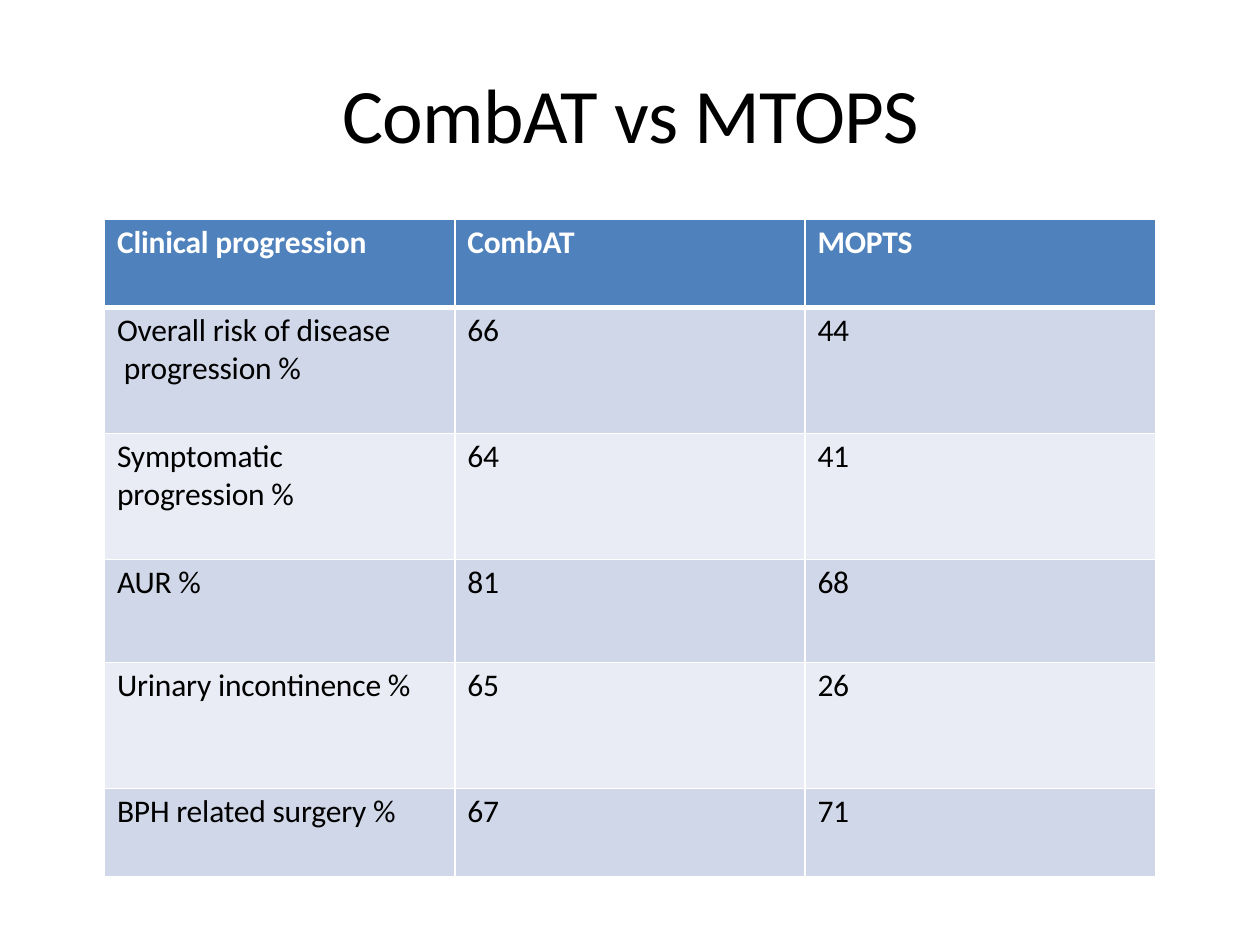
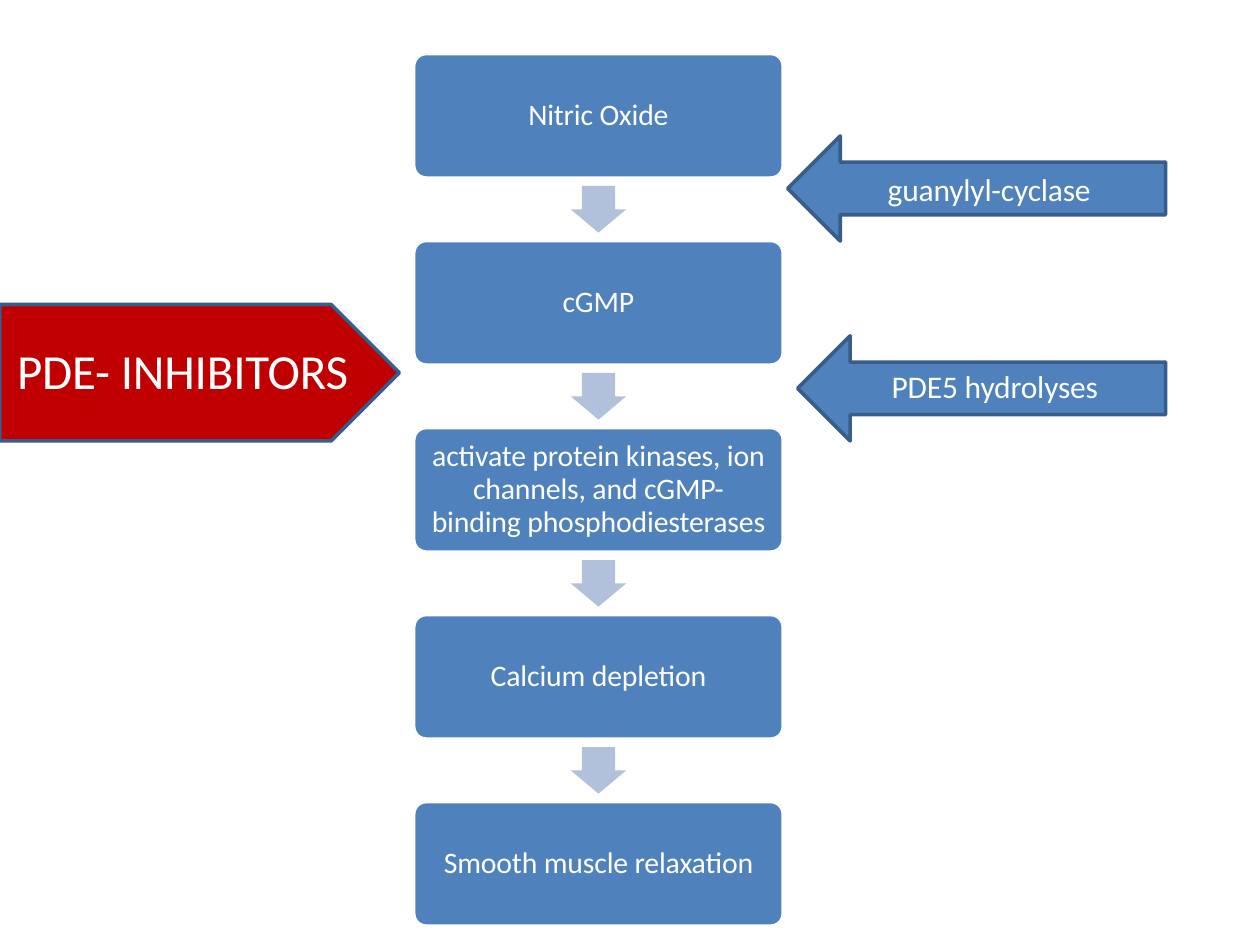
from dataclasses import dataclass

from lxml import etree
from pptx import Presentation
from pptx import util as u
from pptx.dml import color
from pptx.enum import shapes, text
from pptx.oxml import ns


@dataclass(frozen=True)
class Theme:
    font: str = "Calibri"
    black: str = "000000"
    white: str = "FFFFFF"
    blue: str = "4F81BC"
    outline: str = "385D89"
    pale_arrow: str = "B1C1DB"
    red: str = "C00000"
    bands: tuple[str, str] = ("D0D7E8", "E9ECF4")
    title_size: int = 44
    callout_size: int = 28
    body_size: int = 18
    step_size: int = 17
    line_width: float = 2.04
    grid_width: int = 1
    header_rule_width: int = 3


THEME = Theme()


@dataclass(frozen=True)
class Box:
    """Left, top, width and height in centimetres."""
    left: float
    top: float
    width: float
    height: float

    def lengths(self) -> tuple[u.Cm, ...]:
        return tuple(u.Cm(v) for v in (self.left, self.top, self.width, self.height))


@dataclass(frozen=True)
class Label:
    """Wording with its look; a newline is a line break."""
    wording: str
    size: int
    colour: str = THEME.white
    bold: bool = False
    tracking: float = -0.1


@dataclass(frozen=True)
class Figure:
    """A filled preset shape, with an optional outline and label."""
    kind: shapes.MSO_SHAPE
    box: Box
    fill: str
    outline: str | None = None
    label: Label | None = None
    adjustments: tuple[float, ...] = ()


@dataclass(frozen=True)
class Row:
    height: float
    cells: tuple[str, str, str]


# Content
OUTCOMES = (
    Row(1.78, ("Clinical progression", "CombAT", "MOPTS")),
    Row(2.54, ("Overall risk of disease\n progression %", "66", "44")),
    Row(2.54, ("Symptomatic\nprogression %", "64", "41")),
    Row(2.08, ("AUR %", "81", "68")),
    Row(2.54, ("Urinary incontinence %", "65", "26")),
    Row(1.78, ("BPH related surgery %", "67", "71")),
)
PATHWAY = (
    "Nitric Oxide",
    "cGMP",
    "activate protein kinases, ion\nchannels, and cGMP-\nbinding phosphodiesterases",
    "Calcium depletion",
    "Smooth muscle relaxation",
)

# Layout, in centimetres
TITLE_BOX = Box(6.76, 1.3, 11.91, 1.93)
TABLE_BOX = Box(2.11, 4.42, 21.18, 13.26)
FIRST_STEP = Box(8.34, 1.08, 7.45, 2.51)
STEP_PITCH = 3.77
STEP_ARROW_SIZE = (1.12, 0.94)
ENZYME_RIGHT = 23.5
ENZYME_HEIGHT = 2.12


def rgb(value: str) -> color.RGBColor:
    return color.RGBColor.from_string(value)


def write(frame, label: Label) -> None:
    """Write a label into the first paragraph of a text frame."""
    paragraph = frame.paragraphs[0]
    for index, line in enumerate(label.wording.split("\n")):
        if index:
            paragraph.add_line_break()
        run = paragraph.add_run()
        run.text = line
        run.font.name = THEME.font
        run.font.size = u.Pt(label.size)
        run.font.bold = label.bold
        run.font.color.rgb = rgb(label.colour)
        run.font._element.set("spc", str(round(label.tracking * 100)))


def centre(frame) -> None:
    """Centre a frame's text both ways, without insets or wrapping."""
    frame.margin_left = frame.margin_right = 0
    frame.margin_top = frame.margin_bottom = 0
    frame.word_wrap = False
    frame.auto_size = text.MSO_AUTO_SIZE.NONE
    frame.vertical_anchor = text.MSO_ANCHOR.MIDDLE
    frame.paragraphs[0].alignment = text.PP_ALIGN.CENTER


def set_title(slide, box: Box, label: Label):
    title = slide.shapes.title
    title.left, title.top, title.width, title.height = box.lengths()
    centre(title.text_frame)
    write(title.text_frame, label)
    return title


def draw(slide, figure: Figure) -> None:
    shape = slide.shapes.add_shape(figure.kind, *figure.box.lengths())
    shape.shadow.inherit = False
    for index, value in enumerate(figure.adjustments):
        shape.adjustments[index] = value
    shape.fill.solid()
    shape.fill.fore_color.rgb = rgb(figure.fill)
    if figure.outline:
        shape.line.color.rgb = rgb(figure.outline)
        shape.line.width = u.Pt(THEME.line_width)
    else:
        shape.line.fill.background()
    if figure.label:
        centre(shape.text_frame)
        shape.text_frame.paragraphs[0].line_spacing = 0.92
        write(shape.text_frame, figure.label)


def set_border(cell, side: str, width: float) -> None:
    properties = cell._tc.get_or_add_tcPr()
    line = etree.SubElement(properties, ns.qn(f"a:ln{side}"), w=str(u.Pt(width)))
    fill = etree.SubElement(line, ns.qn("a:solidFill"))
    etree.SubElement(fill, ns.qn("a:srgbClr"), val=THEME.white)


def fill_cell(cell, wording: str, row_index: int) -> None:
    is_header = row_index == 0
    cell.margin_left, cell.margin_right = u.Cm(0.25), 0
    cell.margin_top, cell.margin_bottom = u.Cm(0.08), 0
    heavy_side = {0: "B", 1: "T"}.get(row_index)
    for side in "LRTB":
        heavy = side == heavy_side
        set_border(cell, side, THEME.header_rule_width if heavy else THEME.grid_width)
    cell.fill.solid()
    cell.fill.fore_color.rgb = rgb(
        THEME.blue if is_header else THEME.bands[(row_index - 1) % 2])
    cell.text_frame.paragraphs[0].space_before = u.Pt(2.4)
    ink = THEME.white if is_header else THEME.black
    write(cell.text_frame, Label(wording, THEME.body_size, ink, is_header))


def build_comparison(slide) -> None:
    set_title(slide, TITLE_BOX,
              Label("CombAT vs MTOPS", THEME.title_size, THEME.black, tracking=-0.4))
    column_count = len(OUTCOMES[0].cells)
    outcomes = slide.shapes.add_table(
        len(OUTCOMES), column_count, *TABLE_BOX.lengths()).table
    for column in outcomes.columns:
        column.width = u.Cm(TABLE_BOX.width / column_count)
    for row_index, row in enumerate(OUTCOMES):
        outcomes.rows[row_index].height = u.Cm(row.height)
        for column_index, wording in enumerate(row.cells):
            fill_cell(outcomes.cell(row_index, column_index), wording, row_index)


def enzyme(left: float, top: float, label: Label | None = None) -> Figure:
    box = Box(left, top, ENZYME_RIGHT - left, ENZYME_HEIGHT)
    return Figure(shapes.MSO_SHAPE.LEFT_ARROW, box, THEME.blue, THEME.outline, label)


def build_pathway(slide) -> None:
    # Steps, with an arrow centred in each gap
    arrow_width, arrow_height = STEP_ARROW_SIZE
    arrow_left = FIRST_STEP.left + (FIRST_STEP.width - arrow_width) / 2
    gap = STEP_PITCH - FIRST_STEP.height
    for index, wording in enumerate(PATHWAY):
        top = FIRST_STEP.top + index * STEP_PITCH
        if index:
            arrow_top = top - (gap + arrow_height) / 2
            draw(slide, Figure(
                shapes.MSO_SHAPE.DOWN_ARROW,
                Box(arrow_left, arrow_top, arrow_width, arrow_height),
                THEME.pale_arrow, adjustments=(0.6, 0.5)))
        draw(slide, Figure(
            shapes.MSO_SHAPE.ROUNDED_RECTANGLE,
            Box(FIRST_STEP.left, top, FIRST_STEP.width, FIRST_STEP.height),
            THEME.blue, THEME.white, Label(wording, THEME.step_size), (0.1,)))

    # Enzymes acting on the pathway; the title labels the upper one
    draw(slide, enzyme(16.08, 6.77, Label("PDE5 hydrolyses", THEME.body_size)))
    draw(slide, enzyme(15.88, 2.74))
    cyclase = set_title(slide, Box(17.83, 3.38, 4.22, 0.84),
                        Label("guanylyl-cyclase", THEME.body_size))
    slide.shapes.element.append(cyclase.element)

    # Inhibitors
    draw(slide, Figure(
        shapes.MSO_SHAPE.PENTAGON, Box(0, 6.14, 8.05, 2.75), THEME.red,
        THEME.outline, Label("PDE- INHIBITORS", THEME.callout_size)))


def main() -> None:
    deck = Presentation()
    deck.slide_width, deck.slide_height = u.Cm(25.4), u.Cm(19.05)
    title_only = deck.slide_layouts[5]
    for build in (build_comparison, build_pathway):
        build(deck.slides.add_slide(title_only))
    deck.save("out.pptx")


if __name__ == "__main__":
    main()
